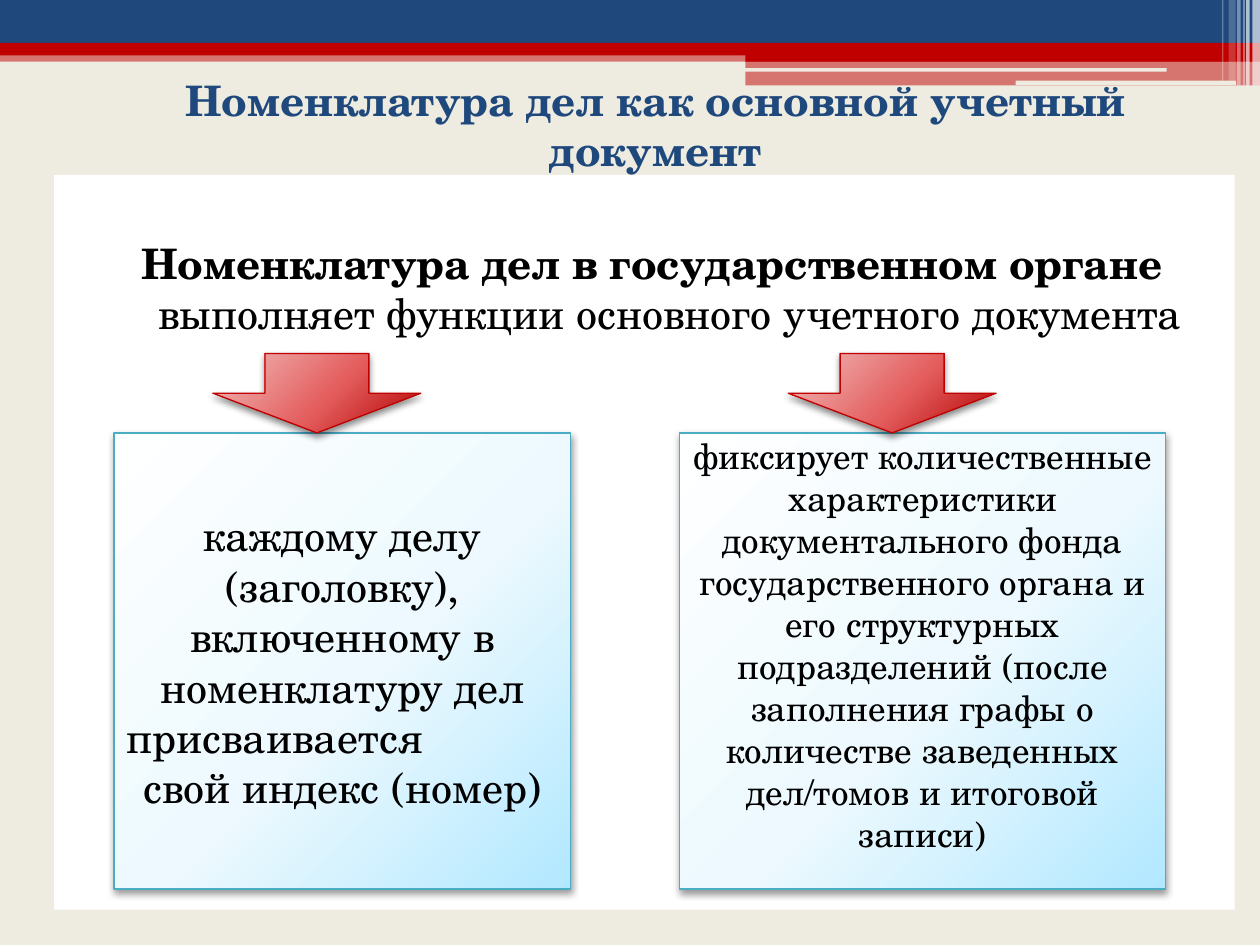
from lxml.etree import SubElement
from pptx import Presentation
from pptx.dml.color import RGBColor
from pptx.enum.shapes import MSO_SHAPE
from pptx.enum.text import MSO_ANCHOR, PP_ALIGN
from pptx.oxml import parse_xml
from pptx.oxml.ns import nsdecls, qn
from pptx.util import Pt

FONT = "TeX Gyre Schola"
CREAM = RGBColor(0xEE, 0xEC, 0xE1)
NAVY = RGBColor(0x1F, 0x49, 0x7D)
RED = RGBColor(0xC0, 0x00, 0x00)
WHITE = RGBColor(0xFF, 0xFF, 0xFF)
BLACK = RGBColor(0x00, 0x00, 0x00)
TEAL = RGBColor(0x4B, 0xAC, 0xC6)
BLUE_STOPS = [(0, "FEFFFF"), (55, "EDF9FE"), (100, "B2E8FF")]
RED_STOPS = [(0, "F1BEBE"), (55, "E45E5E"), (100, "B30000")]
CENTER, LEFT = PP_ALIGN.CENTER, PP_ALIGN.LEFT

TITLE = "Номенклатура дел как основной учетный документ"
STATEMENT = [
    ("Номенклатура дел в государственном органе ", True),
    ("выполняет функции основного учетного документа", False),
]

# left, top, width, height, colour, opacity in percent
BANDS = [
    (0, 28.8, 720, 6.5, RED, 50),
    (0, 0, 720, 24.5, NAVY, 100),
    (0, 24.5, 720, 7.2, RED, 100),
    (426, 28, 294, 7.2, RED, 100),
    (426, 34.8, 294, 14, RED, 50),
]
GAPS = [(425.5, 38.9, 241.2, 2), (580.3, 46.1, 126, 2.6)]
# left, width, height, opacity in percent
STRIPES = [
    (715.6, 4.4, 49, 65),
    (712.1, 2, 49, 65),
    (710.5, 0.7, 49, 60),
    (707, 2, 49, 40),
    (702, 4.1, 46.1, 20),
    (698.4, 0.7, 46.1, 30),
]

FUNCTIONS = [
    {
        "left": 65.2, "width": 261, "arrow_left": 121.7, "size": 24,
        "frame": {},
        "paragraphs": [
            ("каждому делу (заголовку), включенному в номенклатуру дел", CENTER),
            ("присваивается", LEFT),
            ("свой индекс (номер)", CENTER),
        ],
    },
    {
        "left": 388.4, "width": 277.6, "arrow_left": 450.4, "size": 20,
        "frame": {"margin_top": 0, "margin_bottom": Pt(19)},
        "paragraphs": [
            ("фиксирует количественные характеристики документального фонда "
             "государственного органа и его структурных подразделений (после "
             "заполнения графы о количестве заведенных дел/томов и итоговой "
             "записи)", CENTER),
        ],
    },
]
BOX_TOP, BOX_HEIGHT = 247.4, 260.6
ARROW_WIDTH, ARROW_HEIGHT = 118.8, 45.4


def apply(target, **values):
    for name, value in values.items():
        setattr(target, name, value)


def add_text(paragraph, text, size, color=BLACK, bold=False):
    run = paragraph.add_run()
    run.text = text
    apply(run.font, name=FONT, size=Pt(size), bold=bold)
    run.font.color.rgb = color


def add_plain(slide, kind, box, color, opacity=100):
    """Add a borderless shape with a solid, possibly translucent fill."""
    shape = slide.shapes.add_shape(kind, *map(Pt, box))
    shape.fill.solid()
    shape.fill.fore_color.rgb = color
    shape.line.fill.background()
    shape.shadow.inherit = False
    if opacity < 100:
        solid = shape.element.spPr.find(qn("a:solidFill"))
        SubElement(solid[0], qn("a:alpha"), val=str(opacity * 1000))
    return shape


def add_glossy(slide, kind, box, stops, line_color, shadow_opacity):
    """Add an outlined shape with a radial gradient and a soft shadow."""
    shape = slide.shapes.add_shape(kind, *map(Pt, box))
    shape.fill.gradient()
    shape.line.color.rgb = line_color
    shape.line.width = Pt(0.75)
    shape.shadow.inherit = False
    properties = shape.element.spPr
    stop_xml = "".join(
        f'<a:gs pos="{position * 1000}"><a:srgbClr val="{color}"/></a:gs>'
        for position, color in stops)
    properties.replace(properties.find(qn("a:gradFill")), parse_xml(
        f'<a:gradFill {nsdecls("a")} rotWithShape="1"><a:gsLst>{stop_xml}</a:gsLst>'
        '<a:path path="circle"><a:fillToRect l="-40000" t="-90000" '
        'r="140000" b="190000"/></a:path></a:gradFill>'))
    properties.find(qn("a:effectLst")).append(parse_xml(
        f'<a:outerShdw {nsdecls("a")} blurRad="{Pt(4)}" dist="{Pt(2)}" '
        'dir="5400000" rotWithShape="0"><a:srgbClr val="000000">'
        f'<a:alpha val="{shadow_opacity * 1000}"/></a:srgbClr></a:outerShdw>'))
    return shape


def add_header(slide):
    for *box, color, opacity in BANDS:
        add_plain(slide, MSO_SHAPE.RECTANGLE, box, color, opacity)
    for box in GAPS:
        add_plain(slide, MSO_SHAPE.ROUNDED_RECTANGLE, box, CREAM)
    for left, width, height, opacity in STRIPES:
        add_plain(slide, MSO_SHAPE.RECTANGLE, (left, 0, width, height), WHITE, opacity)


def add_title(slide):
    title = slide.shapes.title
    apply(title, left=Pt(48.2), top=Pt(31.7), width=Pt(653), height=Pt(79.2))
    apply(title.text_frame, word_wrap=True, vertical_anchor=MSO_ANCHOR.MIDDLE)
    paragraph = title.text_frame.paragraphs[0]
    apply(paragraph, alignment=CENTER, line_spacing=1.0)
    add_text(paragraph, TITLE, 24, NAVY, True)
    title.element.getparent().append(title.element)  # in front of the header


def add_statement(slide):
    panel = add_plain(slide, MSO_SHAPE.RECTANGLE, (31, 100.1, 674.6, 419.8), WHITE)
    apply(panel.text_frame, word_wrap=True, vertical_anchor=MSO_ANCHOR.TOP,
          margin_top=Pt(35.6))
    paragraph = panel.text_frame.paragraphs[0]
    apply(paragraph, alignment=CENTER, space_before=Pt(3))
    indents = paragraph._p.get_or_add_pPr()
    indents.set("marL", str(Pt(28.8)))
    indents.set("indent", str(Pt(-20.2)))
    for text, bold in STATEMENT:
        add_text(paragraph, text, 24, bold=bold)


def add_function_box(slide, function):
    box = add_glossy(slide, MSO_SHAPE.RECTANGLE,
                     (function["left"], BOX_TOP, function["width"], BOX_HEIGHT),
                     BLUE_STOPS, TEAL, 40)
    frame = box.text_frame
    apply(frame, word_wrap=True, vertical_anchor=MSO_ANCHOR.MIDDLE, **function["frame"])
    for index, (text, alignment) in enumerate(function["paragraphs"]):
        paragraph = frame.add_paragraph() if index else frame.paragraphs[0]
        paragraph.alignment = alignment
        add_text(paragraph, text, function["size"])


def main():
    presentation = Presentation()
    apply(presentation, slide_width=Pt(720), slide_height=Pt(540))
    slide = presentation.slides.add_slide(presentation.slide_layouts[5])
    slide.background.fill.solid()
    slide.background.fill.fore_color.rgb = CREAM
    add_header(slide)
    add_title(slide)
    add_statement(slide)
    for function in FUNCTIONS:
        add_function_box(slide, function)
    for function in FUNCTIONS:
        add_glossy(slide, MSO_SHAPE.DOWN_ARROW,
                   (function["arrow_left"], BOX_TOP - ARROW_HEIGHT,
                    ARROW_WIDTH, ARROW_HEIGHT), RED_STOPS, RED, 45)
    presentation.save("out.pptx")


if __name__ == "__main__":
    main()
